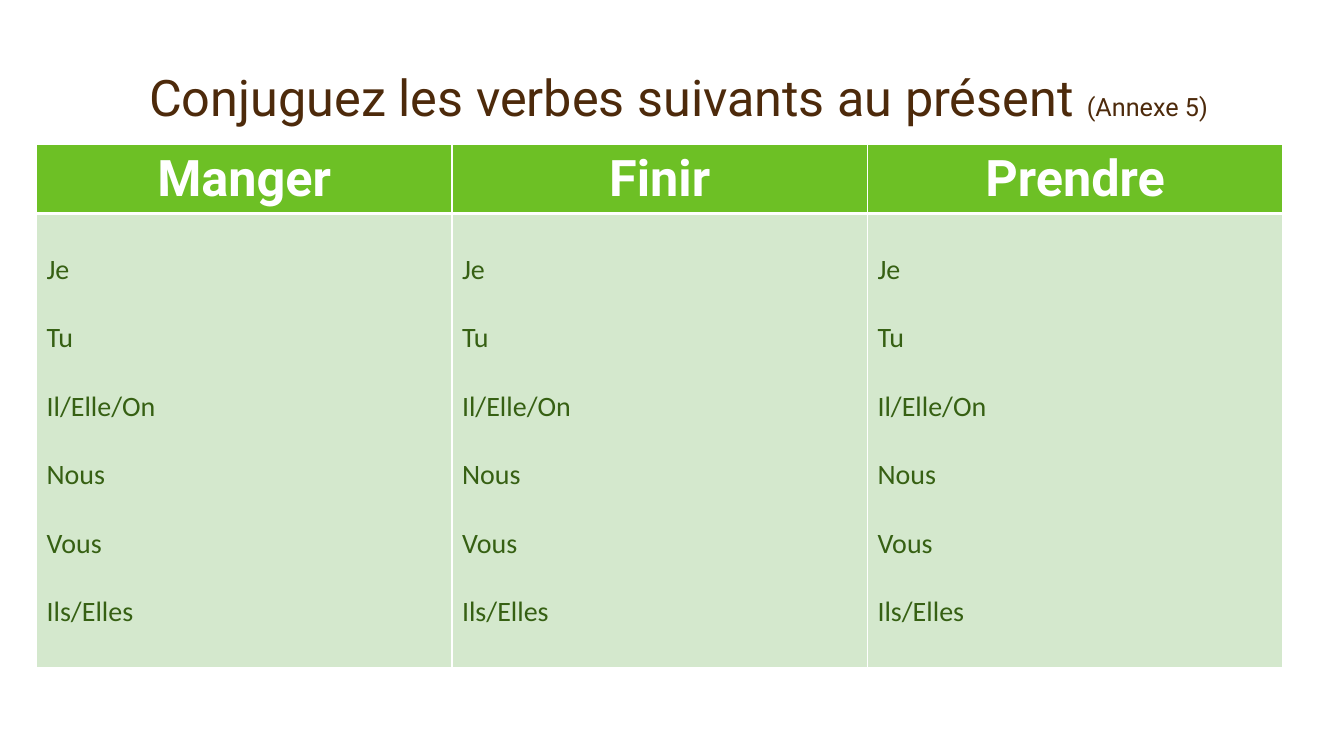
from lxml.etree import SubElement
from pptx import Presentation
from pptx.dml.color import RGBColor
from pptx.enum.text import MSO_ANCHOR as Anchor, PP_ALIGN as Align
from pptx.oxml.ns import qn
from pptx.util import Cm, Pt

TITLE = "Conjuguez les verbes suivants au présent "
ANNEX = "(Annexe 5)"
VERBS = ["Manger", "Finir", "Prendre"]
PRONOUNS = ["Je", "Tu", "Il/Elle/On", "Nous", "Vous", "Ils/Elles"]

BROWN = RGBColor(0x4D, 0x2A, 0x0B)
GREEN = RGBColor(0x6D, 0xC0, 0x25)
PALE_GREEN = RGBColor(0xD4, 0xE8, 0xCD)
DARK_GREEN = RGBColor(0x36, 0x60, 0x13)
WHITE = RGBColor(0xFF, 0xFF, 0xFF)

COLUMN_WIDTH = 10.47
HEADER_HEIGHT, BODY_HEIGHT = 1.73, 11.43


def add_text(para, text, size, color, font="Roboto", bold=False, align=None, before=0):
    para.alignment = align
    if before:
        para.space_before = Pt(before)
    span = para.add_run()
    span.text = text
    span.font.size = Pt(size)
    span.font.name = font
    span.font.bold = bold
    span.font.color.rgb = color


def format_cell(cell, fill, top_width, bottom_width):
    properties = cell._tc.get_or_add_tcPr()
    widths = {"a:lnL": 1, "a:lnR": 1, "a:lnT": top_width, "a:lnB": bottom_width}
    for side, width in widths.items():
        line = SubElement(properties, qn(side), w=str(Pt(width)))
        SubElement(SubElement(line, qn("a:solidFill")), qn("a:srgbClr"), val=str(WHITE))
    cell.fill.solid()
    cell.fill.fore_color.rgb = fill
    cell.vertical_anchor = Anchor.TOP


def main():
    deck = Presentation()
    deck.slide_width, deck.slide_height = Cm(33.87), Cm(19.05)
    page = deck.slides.add_slide(deck.slide_layouts[5])

    title = page.shapes.title
    title.left, title.top, title.width, title.height = Cm(1.35), Cm(0.84), Cm(31.5), Cm(2.49)
    title.text_frame.vertical_anchor = Anchor.BOTTOM
    para = title.text_frame.paragraphs[0]
    para.line_spacing = 0.9
    add_text(para, TITLE, 36, BROWN, align=Align.CENTER)
    add_text(para, ANNEX, 18, BROWN, align=Align.CENTER)

    frame = page.shapes.add_table(2, len(VERBS), Cm(0.92), Cm(3.64),
                                  Cm(COLUMN_WIDTH * len(VERBS)), Cm(HEADER_HEIGHT + BODY_HEIGHT))
    table = frame.table
    table.rows[0].height, table.rows[1].height = Cm(HEADER_HEIGHT), Cm(BODY_HEIGHT)

    for index, verb in enumerate(VERBS):
        table.columns[index].width = Cm(COLUMN_WIDTH)
        header, body = table.cell(0, index), table.cell(1, index)
        format_cell(header, GREEN, 1, 3)
        add_text(header.text_frame.paragraphs[0], verb, 36, WHITE, bold=True, align=Align.CENTER)

        format_cell(body, PALE_GREEN, 3, 1)
        body.margin_top = Cm(0.99)
        for row, pronoun in enumerate(PRONOUNS):
            para = body.text_frame.add_paragraph() if row else body.text_frame.paragraphs[0]
            add_text(para, pronoun, 20, DARK_GREEN, font="Calibri", before=24.4 if row else 0)

    deck.save("out.pptx")


if __name__ == "__main__":
    main()
